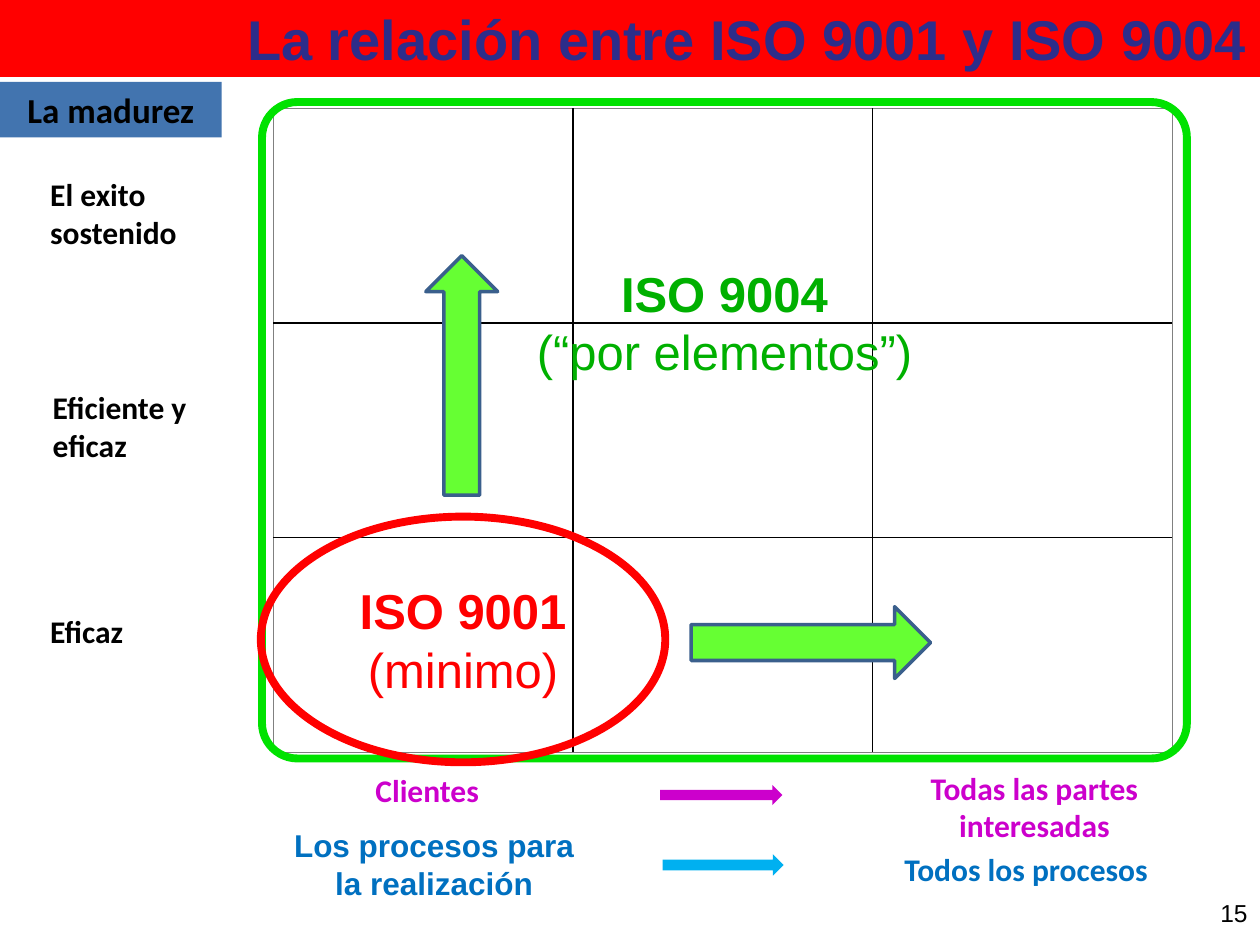
import pptx
import pptx.dml.color
import pptx.enum.shapes
import pptx.enum.text
import pptx.oxml
import pptx.oxml.ns
import pptx.util

Inches = pptx.util.Inches
Pt = pptx.util.Pt
Shape = pptx.enum.shapes.MSO_SHAPE
Align = pptx.enum.text.PP_ALIGN
Anchor = pptx.enum.text.MSO_ANCHOR
AutoSize = pptx.enum.text.MSO_AUTO_SIZE

BLACK, RED, BLUE, PURPLE = "000000", "FF0000", "0070C0", "CC00CC"
GREEN, ARROW_GREEN, ARROW_EDGE = "00B000", "66FF33", "3A5F8C"


def color(value):
    return pptx.dml.color.RGBColor.from_string(value)


class Slide:
    def __init__(self, deck):
        self.page = deck.slides.add_slide(deck.slide_layouts[6])
        self.label_style = {"name": "Calibri", "size": Pt(18), "bold": True}

    def fill_text(self, box, paragraphs, ink, align=Align.CENTER, frame=None, **style):
        text_frame = box.text_frame
        frame_format = {"vertical_anchor": Anchor.MIDDLE, "word_wrap": True}
        for name, value in (frame_format | (frame or {})).items():
            setattr(text_frame, name, value)
        for index, lines in enumerate(paragraphs):
            para = text_frame.add_paragraph() if index else text_frame.paragraphs[0]
            para.alignment = align
            for number, (text, bold) in enumerate(lines):
                if number:
                    para.add_line_break()
                span = para.add_run()
                span.text = text
                font_format = self.label_style | style | {"bold": bold}
                for name, value in font_format.items():
                    setattr(span.font, name, value)
                span.font.color.rgb = color(ink)

    def shape(self, kind, place, fill=None, line=None, width=2):
        box = self.page.shapes.add_shape(kind, *map(Inches, place))
        box.shadow.inherit = False
        if fill:
            box.fill.solid()
            box.fill.fore_color.rgb = color(fill)
        else:
            box.fill.background()
        if line:
            box.line.color.rgb = color(line)
            box.line.width = Pt(width)
        else:
            box.line.fill.background()
        return box

    def label(self, place, lines, ink, align=Align.CENTER, **style):
        box = self.page.shapes.add_textbox(*map(Inches, place))
        frame = {
            "vertical_anchor": Anchor.TOP,
            "word_wrap": False,
            "auto_size": AutoSize.SHAPE_TO_FIT_TEXT,
        }
        self.fill_text(box, [[(line, True) for line in lines]], ink, align, frame, **style)

    def border(self, side, outer):
        width, ink = (Pt(0.25), "808080") if outer else (Pt(1), BLACK)
        namespace = pptx.oxml.ns.nsdecls("a")
        return pptx.oxml.parse_xml(
            f'<a:{side} {namespace} w="{width}"><a:solidFill>'
            f'<a:srgbClr val="{ink}"/></a:solidFill></a:{side}>'
        )

    def grid(self, place, count):
        table = self.page.shapes.add_table(count, count, *map(Inches, place)).table
        table.first_row = table.horz_banding = False
        last = count - 1
        for row in range(count):
            for column in range(count):
                cell = table.cell(row, column)
                cell.fill.background()
                sides = {
                    "lnL": column == 0,
                    "lnR": column == last,
                    "lnT": row == 0,
                    "lnB": row == last,
                }
                properties = cell._tc.get_or_add_tcPr()
                for index, (side, outer) in enumerate(sides.items()):
                    properties.insert(index, self.border(side, outer))


def main():
    deck = pptx.Presentation()
    deck.slide_width, deck.slide_height = Inches(10), Inches(7.5)
    slide = Slide(deck)

    slide.grid((2.17, 0.86, 7.13, 5.11), 3)

    maturity = slide.shape(Shape.RECTANGLE, (0, 0.65, 1.76, 0.44), "4274AF")
    slide.fill_text(maturity, [[("La madurez", True)]], BLACK,
                    frame={"word_wrap": False}, size=Pt(20))

    scope = slide.shape(Shape.ROUNDED_RECTANGLE, (2.08, 0.81, 7.34, 5.21),
                        line="00E200", width=4.5)
    scope.adjustments[0] = 0.054
    slide.fill_text(scope, [[("ISO 9004", True)], [("(“por elementos”)", False)]], GREEN,
                    frame={"margin_bottom": Inches(1.77)}, name="Arial", size=Pt(28))

    for left, top, angle in ((3.38, 2.03, 0), (6.15, 4.15, 90)):
        arrow = slide.shape(Shape.UP_ARROW, (left, top, 0.57, 1.9),
                            ARROW_GREEN, ARROW_EDGE)
        arrow.rotation = angle

    title = slide.shape(Shape.RECTANGLE, (0, 0, 10, 0.61), RED)
    slide.fill_text(title, [[("La relación entre ISO 9001 y ISO 9004", True)]], "2D2D8A",
                    Align.RIGHT, name="Arial", size=Pt(32))

    for place, lines in (
        ((0.3, 1.34, 1.39, 0.71), ["El exito", "sostenido"]),
        ((0.32, 3.03, 1.53, 0.71), ["Eficiente y ", "eficaz"]),
        ((0.3, 4.81, 0.93, 0.4), ["Eficaz"]),
    ):
        slide.label(place, lines, BLACK, Align.LEFT)

    for place, lines, ink, font in (
        ((2.8, 6.07, 1.18, 0.4), ["Clientes"], PURPLE, "Calibri"),
        ((7.12, 6.05, 2.18, 0.71), ["Todas las partes", "interesadas"], PURPLE, "Calibri"),
        ((6.86, 6.7, 2.57, 0.4), ["Todos los procesos"], BLUE, "Calibri"),
        ((2.22, 6.51, 2.45, 0.71), ["Los procesos para", "la realización"], BLUE, "Arial"),
    ):
        slide.label(place, lines, ink, name=font)

    minimum = slide.shape(Shape.OVAL, (2.07, 4.1, 3.21, 1.95), line=RED, width=4.5)
    slide.fill_text(minimum, [[("ISO 9001", True), ("(minimo)", False)]], RED,
                    name="Arial", size=Pt(28))

    slide.shape(Shape.RIGHT_ARROW, (5.24, 6.23, 0.97, 0.16), PURPLE)
    slide.shape(Shape.RIGHT_ARROW, (5.26, 6.78, 0.96, 0.17), "00B0F0")

    number = slide.page.shapes.add_textbox(*map(Inches, (7.67, 6.98, 2.33, 0.52)))
    slide.fill_text(number, [[("15", False)]], BLACK, Align.RIGHT, name="Arial", size=Pt(14))

    deck.save("out.pptx")


if __name__ == "__main__":
    main()
